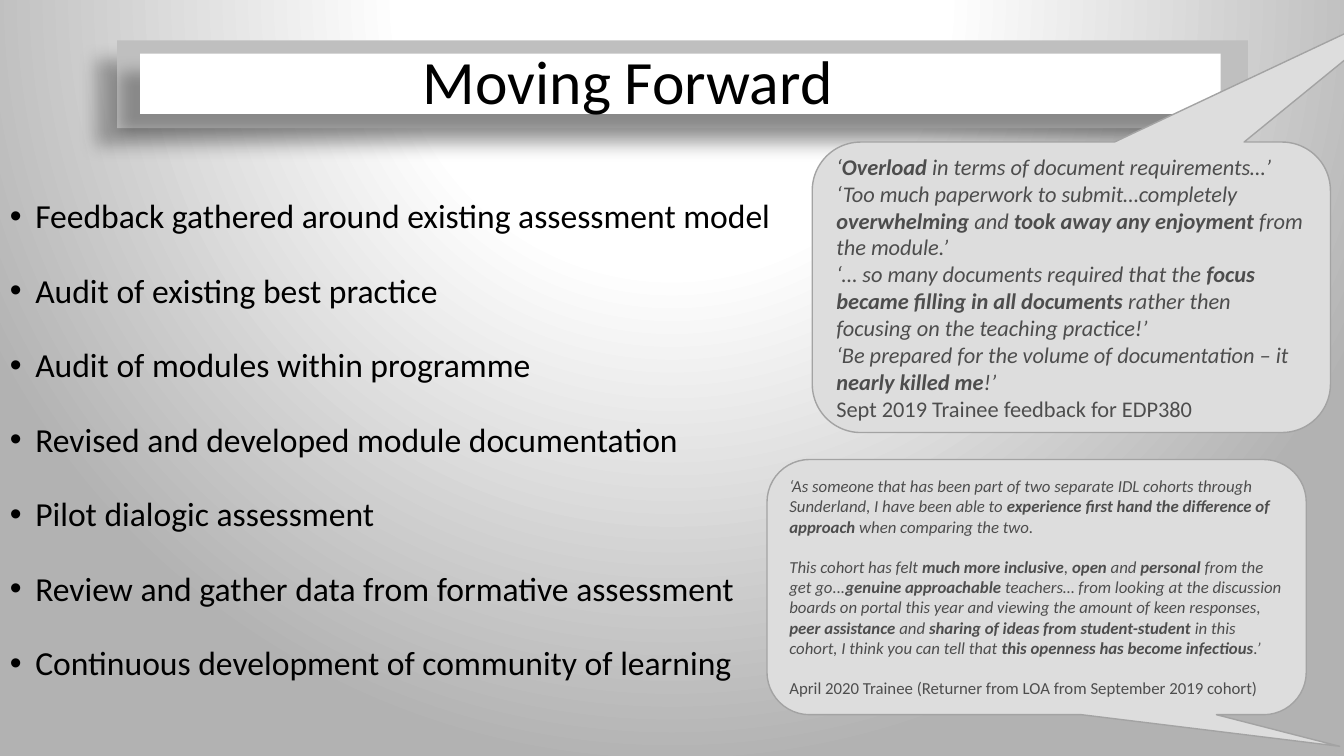
from lxml import etree
from pptx import Presentation
from pptx import util as u
from pptx.dml.color import RGBColor
from pptx.enum import shapes, text
from pptx.oxml import ns, parse_xml

INK = {"black": "000000", "white": "FFFFFF", "bar": "BFBFBF", "edge": "B2B2B2",
       "bubble": "DDDDDD", "rim": "A3A3A3", "quote": "4D4D4D"}
FONT = "Calibri"

STEPS = [
    "Feedback gathered around existing assessment model",
    "Audit of existing best practice",
    "Audit of modules within programme",
    "Revised and developed module documentation",
    "Pilot dialogic assessment",
    "Review and gather data from formative assessment",
    "Continuous development of community of learning",
]

# Words between asterisks are bold; the last entry names the source.
LOAD = [
    "‘*Overload* in terms of document requirements…’",
    "‘Too much paperwork to submit…completely *overwhelming* and "
    "*took away any enjoyment *from the module.’",
    "‘… so many documents required that the *focus became filling in all documents*"
    " rather then focusing on the teaching practice!’",
    "‘Be prepared for the volume of documentation – it *nearly killed me*!’",
    "Sept 2019 Trainee feedback for EDP380",
]
COHORT = [
    "‘As someone that has been part of two separate IDL cohorts through Sunderland, "
    "I have been able to *experience first hand the difference of approach*"
    " when comparing the two.",
    "This cohort has felt *much more inclusive*, *open* and *personal* from the get go..."
    "*genuine approachable *teachers… from looking at the discussion boards on portal "
    "this year and viewing the amount of keen responses, *peer assistance *and "
    "*sharing of ideas from student-student *in this cohort, I think you can tell that "
    "*this openness has become infectious*.’",
    "April 2020 Trainee (Returner from LOA from September 2019 cohort)",
]


def rgb(name):
    return RGBColor.from_string(INK[name])


def write(par, words, size, color="black", italic=False, align=text.PP_ALIGN.LEFT,
          line=1.0, before=0):
    """Fill a paragraph, turning *marked* words bold."""
    par.alignment, par.line_spacing = align, line
    par.space_before = u.Pt(before)
    for i, part in enumerate(words.split("*")):
        if part:
            run = par.add_run()
            run.text = part
            font = run.font
            font.name, font.size = FONT, u.Pt(size)
            font.bold, font.italic = i % 2 == 1, italic
            font.color.rgb = rgb(color)


def paras(frame, count):
    """Give a frame the wanted number of paragraphs."""
    return [frame.paragraphs[0]] + [frame.add_paragraph() for _ in range(count - 1)]


def block(slide, kind, box, fill, rim=None):
    shape = slide.shapes.add_shape(kind, *map(u.Cm, box))
    shape.shadow.inherit = False
    shape.fill.solid()
    shape.fill.fore_color.rgb = rgb(fill)
    if rim:
        shape.line.color.rgb = rgb(rim)
        shape.line.width = u.Pt(1)
    else:
        shape.line.fill.background()
    return shape


def label(slide, box, anchor):
    frame = slide.shapes.add_textbox(*map(u.Cm, box)).text_frame
    frame.word_wrap = True
    frame.vertical_anchor = anchor
    return frame


def shade(shape):
    """Cast a soft shadow down and to the left."""
    effects = shape._element.spPr.find(ns.qn("a:effectLst"))
    effects.append(parse_xml(
        f'<a:outerShdw {ns.nsdecls("a")} blurRad="149987" dist="250190" dir="8460000" '
        f'algn="ctr" rotWithShape="0"><a:srgbClr val="{INK["black"]}">'
        '<a:alpha val="28000"/></a:srgbClr></a:outerShdw>'))


def backdrop(slide):
    """Paint a round gradient centred above the slide."""
    fill = slide.background.fill
    fill.gradient()
    grad = slide._element.find(".//" + ns.qn("a:gradFill"))
    for child in list(grad):
        grad.remove(child)
    stops = etree.SubElement(grad, ns.qn("a:gsLst"))
    for pos, name in ((0, "white"), (35, "white"), (100, "edge")):
        stop = etree.SubElement(stops, ns.qn("a:gs"), pos=str(pos * 1000))
        etree.SubElement(stop, ns.qn("a:srgbClr"), val=INK[name])
    round_ = etree.SubElement(grad, ns.qn("a:path"), attrib={"path": "circle"})
    etree.SubElement(round_, ns.qn("a:fillToRect"),
                     l="50000", t="-80000", r="50000", b="180000")


def banner(slide, box, words):
    x, y, w, h = box
    rect = shapes.MSO_SHAPE.RECTANGLE
    shade(block(slide, rect, box, "bar"))
    shade(block(slide, rect, (x + 0.58, y + 0.33, w - 1.27, h - 0.69), "white"))
    frame = label(slide, (x + 7.46, y - 0.74, w - 7.46, h + 1.47), text.MSO_ANCHOR.MIDDLE)
    write(frame.paragraphs[0], words, 44, align=text.PP_ALIGN.JUSTIFY, line=0.9)


def bullets(slide, box, items):
    frame = label(slide, box, text.MSO_ANCHOR.TOP)
    for par, item in zip(paras(frame, len(items)), items):
        write(par, item, 24, align=text.PP_ALIGN.JUSTIFY, line=1.5, before=10)
        props = par._p.get_or_add_pPr()
        props.set("marL", str(u.Cm(0.64)))
        props.set("indent", str(-u.Cm(0.64)))
        etree.SubElement(props, ns.qn("a:buFont"), typeface="Arial")
        etree.SubElement(props, ns.qn("a:buChar"), char="•")


def bubble(slide, box, tail, quotes, size, gap=0):
    """Draw a callout of italic quotes closed by an upright source line."""
    shape = block(slide, shapes.MSO_SHAPE.ROUNDED_RECTANGULAR_CALLOUT, box, "bubble", "rim")
    for i, value in enumerate((*tail, 0.167)):
        shape.adjustments[i] = value
    frame = shape.text_frame
    frame.word_wrap = True
    frame.vertical_anchor = text.MSO_ANCHOR.MIDDLE
    last = len(quotes) - 1
    for i, par in enumerate(paras(frame, len(quotes))):
        write(par, quotes[i], size, "quote", italic=i < last, before=gap if i else 0)


def main():
    deck = Presentation()
    deck.slide_width, deck.slide_height = u.Cm(33.87), u.Cm(19.05)
    slide = deck.slides.add_slide(deck.slide_layouts[6])
    backdrop(slide)
    banner(slide, (2.95, 1.02, 28.5, 2.21), "Moving Forward")
    bullets(slide, (0, 4.29, 33.17, 14.7), STEPS)
    bubble(slide, (20.47, 3.58, 13.06, 7.32), (0.675, -0.997), LOAD, 16)
    bubble(slide, (19.33, 11.58, 13.59, 6.43), (0.562, 0.624), COHORT, 12, gap=14.6)
    deck.save("out.pptx")


if __name__ == "__main__":
    main()
